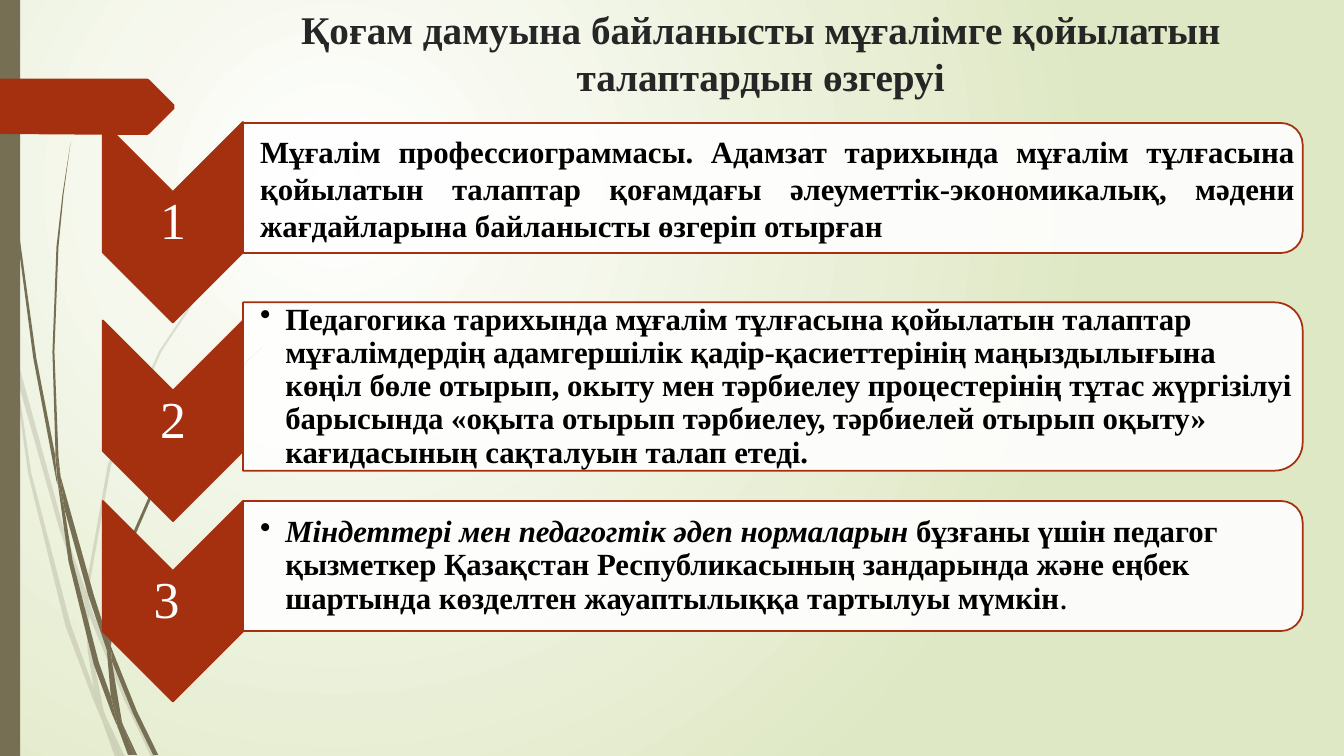
from dataclasses import dataclass

from lxml import etree
from pptx import Presentation
from pptx.dml.color import RGBColor
from pptx.enum.shapes import MSO_SHAPE
from pptx.enum.text import MSO_ANCHOR, PP_ALIGN
from pptx.oxml.ns import qn
from pptx.util import Pt

PX = 9144  # EMU per px, 100 px to the inch
WIDTH, HEIGHT = 1333, 750
FONT = "Times New Roman"

WHITE = RGBColor(0xFF, 0xFF, 0xFF)
BLACK = RGBColor(0x00, 0x00, 0x00)
TITLE_GREY = RGBColor(0x26, 0x26, 0x26)
PALE_GREEN = RGBColor(0xDF, 0xE8, 0xC4)
OLIVE = RGBColor(0x76, 0x6F, 0x54)
RUST = RGBColor(0xA5, 0x30, 0x10)

Outline = list[tuple[int, int]]

PALE_GRASS: list[Outline] = [
    [(11, 350), (9, 322), (0, 282), (0, 299), (10, 344)],
    [(58, 522), (84, 599), (85, 586), (62, 520), (14, 345), (17, 376)],
    [(92, 607), (88, 596), (88, 610), (123, 694), (150, 751), (155, 751), (127, 692)],
    [(119, 751), (124, 751), (105, 711)],
    [(93, 683), (70, 619), (31, 469), (17, 376), (11, 350), (28, 470), (65, 621),
     (92, 693), (101, 714), (99, 707)],
    [(84, 599), (87, 646), (93, 683), (96, 692), (105, 711), (103, 706), (91, 646),
     (88, 610), (88, 608)],
    [(88, 584), (110, 462), (160, 349), (229, 245), (268, 198), (290, 175), (312, 154),
     (312, 153), (289, 175), (268, 197), (228, 244), (158, 348), (107, 461), (85, 584),
     (85, 586), (88, 596)],
    [(101, 714), (114, 751), (119, 751)],
    [(88, 608), (88, 610), (88, 596), (85, 586), (84, 599)],
    [(96, 692), (93, 683), (99, 707), (101, 714), (119, 751), (105, 711)],
]

DARK_GRASS: list[Outline] = [
    [(7, 110), (17, 233), (33, 355), (56, 477), (57, 481), (55, 457), (55, 453),
     (36, 355), (19, 232), (8, 109), (5, 48), (4, 0), (3, 0), (4, 48)],
    [(88, 592), (106, 645), (106, 633), (106, 631), (93, 590), (60, 472), (64, 505)],
    [(113, 649), (110, 641), (111, 656), (132, 708), (152, 749), (157, 749), (136, 706)],
    [(110, 691), (98, 657), (72, 556), (64, 505), (57, 477), (68, 557), (93, 659),
     (111, 708), (117, 722), (116, 717)],
    [(60, 472), (58, 453), (54, 349), (58, 245), (63, 193), (70, 141), (62, 193),
     (56, 245), (52, 349), (55, 449)],
    [(133, 749), (136, 749), (122, 719)],
    [(57, 477), (64, 505), (60, 472), (55, 449), (55, 453)],
    [(111, 633), (125, 552), (158, 476), (205, 406), (231, 374), (245, 359), (261, 344),
     (260, 344), (245, 358), (231, 373), (204, 405), (156, 474), (122, 551), (106, 631),
     (110, 641)],
    [(117, 722), (127, 749), (131, 749)],
    [(106, 645), (110, 691), (116, 706), (122, 719), (121, 716), (111, 656), (109, 651)],
    [(106, 645), (109, 651), (111, 656), (110, 641), (106, 631), (106, 633)],
    [(116, 706), (110, 691), (116, 717), (117, 722), (130, 749), (133, 749), (122, 719)],
]

TAG: Outline = [(0, 78), (146, 78), (148, 79), (173, 104), (173, 108), (148, 133),
                (146, 134), (0, 133)]


@dataclass(frozen=True)
class Span:
    text: str
    bold: bool = True
    italic: bool = False
    font: str = FONT


@dataclass(frozen=True)
class Step:
    number: str
    chevron_top: int
    card_top: int
    card_height: int
    spans: tuple[Span, ...]
    bulleted: bool = True


STEPS = [
    Step("1", 121, 122, 129, (Span(
        "Мұғалім профессиограммасы. Адамзат тарихында мұғалім тұлғасына қойылатын талаптар "
        "қоғамдағы әлеуметтік-экономикалық, мәдени жағдайларына байланысты өзгеріп отырған"),),
        bulleted=False),
    Step("2", 318, 300, 167, (Span(
        "Педагогика тарихында мұғалім тұлғасына қойылатын талаптар мұғалімдердің адамгершілік "
        "қадір-қасиеттерінің маңыздылығына көңіл бөле отырып, окыту мен тәрбиелеу процестерінің "
        "тұтас жүргізілуі барысында «оқыта отырып тәрбиелеу, тәрбиелей отырып оқыту» "
        "кағидасының сақталуын талап етеді."),)),
    Step("3 ", 497, 497, 129, (
        Span("Міндеттері мен педагогтік әдеп нормаларын ", italic=True),
        Span("бұзғаны үшін педагог қызметкер Қазақстан Республикасының зандарында және еңбек "
             "шартында көзделтен жауаптылыққа тартылуы мүмкін"),
        Span(".", bold=False, font="League Spartan"))),
]


def paint(shape, color: RGBColor, opacity: int = 100, line: RGBColor | None = None) -> None:
    shape.shadow.inherit = False
    shape.fill.solid()
    shape.fill.fore_color.rgb = color
    if opacity < 100:
        tint = shape._element.spPr.find(qn("a:solidFill"))[0]
        etree.SubElement(tint, qn("a:alpha"), val=str(opacity * 1000))
    if line is None:
        shape.line.fill.background()
    else:
        shape.line.color.rgb = line
        shape.line.width = Pt(1.25)


def draw_outline(shapes, outline: Outline, color: RGBColor, opacity: int = 100) -> None:
    builder = shapes.build_freeform(*outline[0], scale=PX)
    builder.add_line_segments(outline[1:], close=True)
    paint(builder.convert_to_shape(), color, opacity)


def add_turned(shapes, kind: MSO_SHAPE, left: int, top: int, width: int, height: int):
    """Add a shape turned by 90 degrees that covers the given area once turned."""
    shift = (width - height) // 2
    shape = shapes.add_shape(kind, (left + shift) * PX, (top - shift) * PX,
                             height * PX, width * PX)
    shape.rotation = 90
    return shape


def add_text(shapes, left: int, top: int, width: int, height: int, spans: tuple[Span, ...],
             size: int, color: RGBColor, align: PP_ALIGN):
    box = shapes.add_textbox(left * PX, top * PX, width * PX, height * PX)
    box.text_frame.word_wrap = True
    para = box.text_frame.paragraphs[0]
    para.alignment = align
    para.font.size = Pt(size)
    para.font.color.rgb = color
    for span in spans:
        run = para.add_run()
        run.text = span.text
        run.font.name, run.font.bold, run.font.italic = span.font, span.bold, span.italic
    return box.text_frame


def set_insets(frame, left: int, other: int) -> None:
    frame.vertical_anchor = MSO_ANCHOR.MIDDLE
    frame.margin_left = left * PX
    frame.margin_top = frame.margin_right = frame.margin_bottom = other * PX


def add_bullet(para, indent: int) -> None:
    properties = para._p.get_or_add_pPr()
    properties.set("marL", str(indent * PX))
    properties.set("indent", str(-indent * PX))
    etree.SubElement(properties, qn("a:buChar"), char="•")


def draw_step(shapes, step: Step) -> None:
    chevron = add_turned(shapes, MSO_SHAPE.CHEVRON, 102, step.chevron_top, 139, 199)
    paint(chevron, RUST, line=RUST)
    number = add_text(shapes, 102, step.chevron_top + 70, 139, 60,
                      (Span(step.number, bold=False),), 37, WHITE, PP_ALIGN.CENTER)
    set_insets(number, 3, 3)
    number.paragraphs[0].line_spacing = 0.9

    card = add_turned(shapes, MSO_SHAPE.ROUND_2_SAME_RECTANGLE, 241, step.card_top,
                      1051, step.card_height)
    paint(card, WHITE, 90, RUST)
    inset = step.card_height // 20
    align = PP_ALIGN.LEFT if step.bulleted else PP_ALIGN.JUSTIFY
    body = add_text(shapes, 241, step.card_top + inset, 1051 - inset,
                    step.card_height - 2 * inset, step.spans, 22, BLACK, align)
    set_insets(body, 17, 2)
    if step.bulleted:
        body.paragraphs[0].line_spacing = 0.9
        add_bullet(body.paragraphs[0], 25)


def set_background(page) -> None:
    """Fill the page with a gradient that spreads in circles from the upper left."""
    fill = page.background.fill
    fill.gradient()
    for stop, color in zip(fill.gradient_stops, (WHITE, PALE_GREEN)):
        stop.color.rgb = color
    gradient = page._element.find(".//" + qn("a:gradFill"))
    gradient.remove(gradient.find(qn("a:lin")))
    circle = etree.SubElement(gradient, qn("a:path"), path="circle")
    etree.SubElement(circle, qn("a:fillToRect"), l="50000", t="50000", r="100000", b="100000")


def main() -> None:
    deck = Presentation()
    deck.slide_width, deck.slide_height = WIDTH * PX, HEIGHT * PX
    page = deck.slides.add_slide(deck.slide_layouts[6])
    set_background(page)

    for grass, opacity in ((PALE_GRASS, 20), (DARK_GRASS, 100)):
        tuft = page.shapes.add_group_shape()
        for outline in grass:
            draw_outline(tuft.shapes, outline, OLIVE, opacity)
    rail = page.shapes.add_shape(MSO_SHAPE.RECTANGLE, 0, 0, 20 * PX, HEIGHT * PX)
    paint(rail, OLIVE)
    draw_outline(page.shapes, TAG, RUST)

    add_text(page.shapes, 267, 0, 975, 82,
             (Span("Қоғам дамуына байланысты мұғалімге қойылатын талаптардын өзгеруі"),),
             28, TITLE_GREY, PP_ALIGN.CENTER)
    for step in STEPS:
        draw_step(page.shapes, step)
    deck.save("out.pptx")


if __name__ == "__main__":
    main()
